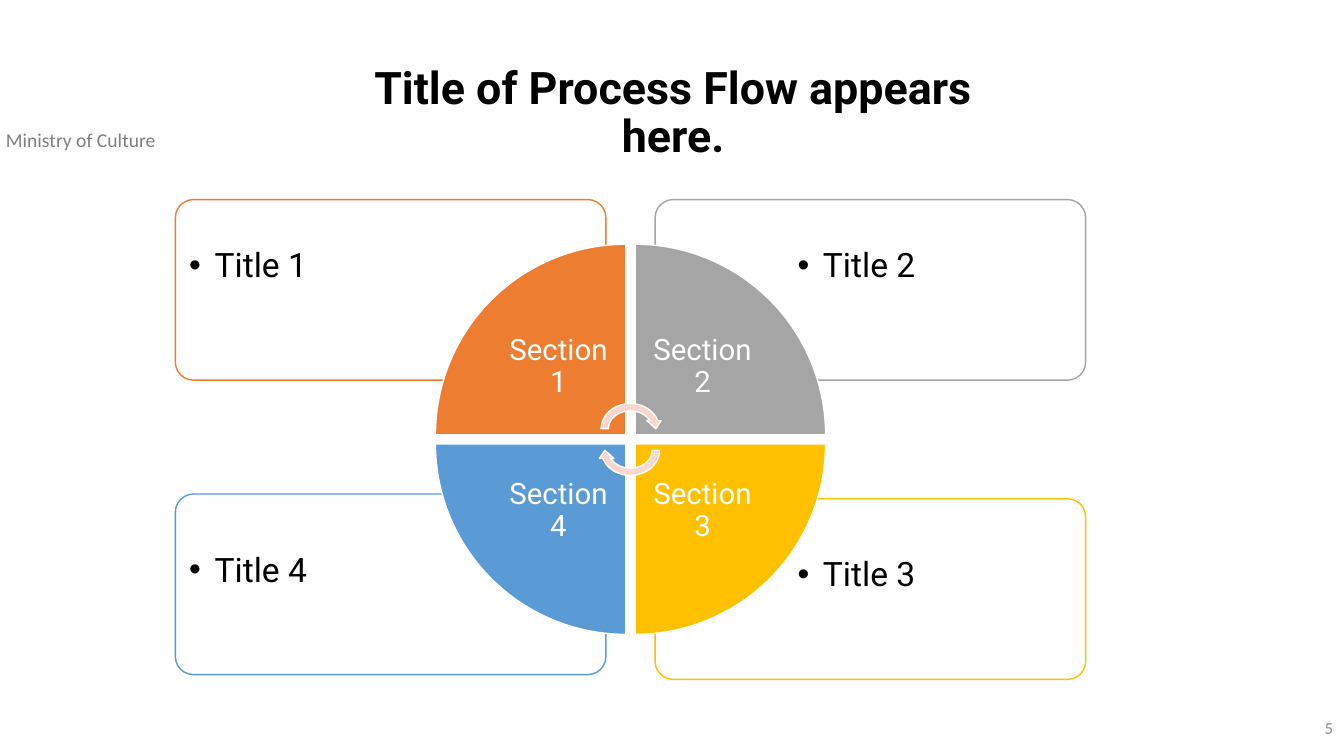
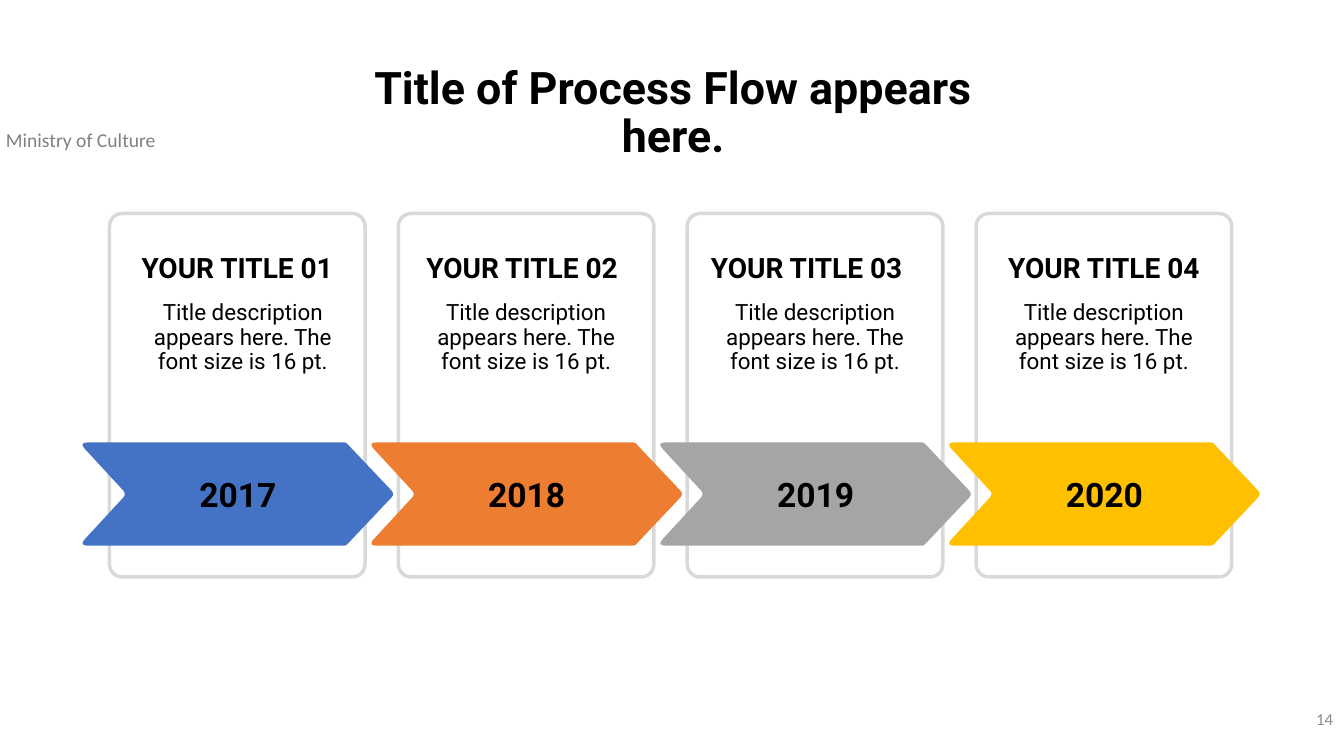
import math
from dataclasses import dataclass

from lxml import etree
from pptx import Presentation
from pptx import util as u
from pptx.dml.color import RGBColor
from pptx.enum import shapes, text
from pptx.oxml.ns import qn


@dataclass(frozen=True)
class Theme:
    heading_font: str = "Roboto"
    footer_font: str = "Calibri"
    black: str = "000000"
    white: str = "FFFFFF"
    ministry: str = "808080"
    number: str = "8C8C8C"
    frame: str = "D9D9D9"
    cycle_arrow: str = "F8D7CE"
    blue: str = "4472C4"
    orange: str = "ED7D31"
    gray: str = "A5A5A5"
    yellow: str = "FFC000"
    light_blue: str = "5B9BD5"
    title_size: int = 32
    large_size: int = 24
    section_size: int = 21
    heading_size: int = 20
    body_size: int = 16
    ministry_size: int = 14
    number_size: int = 12


THEME = Theme()
ALIGN = text.PP_ALIGN
ANCHOR = text.MSO_ANCHOR
PRESET = shapes.MSO_SHAPE

# Lengths below are in centimetres.
CYCLE_X, CYCLE_Y = 15.89, 11.07
WEDGE_SIZE, WEDGE_GAP = 4.8, 0.23
LABEL_SIZE = 3.4
BOX_WIDTH, BOX_HEIGHT, BOX_GAP = 10.85, 4.55, 1.24
BULLET_WIDTH, BULLET_HEIGHT = 7.39, 3.2
CARD_PITCH, CARD_LEFT, CARD_TOP = 7.28, 2.76, 5.38
CARD_WIDTH, CARD_HEIGHT = 6.44, 9.16
ARROW_LEFT, ARROW_TOP = 1.99, 11.15
# Corners of an arrow: x, y and the length cut off for rounding.
ARROW_CORNERS = [(0, 0, 0.23), (6.73, 0, 0.05), (7.96, 1.3, 0.13),
                 (6.73, 2.6, 0.05), (0, 2.6, 0.23), (1.2, 1.3, 0.13)]

# Label, box title, colour, horizontal and vertical side, box top, bullet offset, anchor
SECTIONS = [
    ("Section 1", "Title 1", THEME.orange, -1, -1, 5.03, 0.1, ANCHOR.MIDDLE),
    ("Section 2", "Title 2", THEME.gray, 1, -1, 5.03, 0.1, ANCHOR.MIDDLE),
    ("Section 3", "Title 3", THEME.yellow, 1, 1, 12.57, 1.24, ANCHOR.TOP),
    ("Section 4", "Title 4", THEME.light_blue, -1, 1, 12.45, 1.24, ANCHOR.TOP),
]

# Year, heading, colour, sideways shift of heading and of description
MILESTONES = [
    ("2017", "YOUR TITLE 01", THEME.blue, 0, 0.14),
    ("2018", "YOUR TITLE 02", THEME.orange, -0.1, 0),
    ("2019", "YOUR TITLE 03", THEME.gray, -0.21, 0),
    ("2020", "YOUR TITLE 04", THEME.yellow, 0, 0),
]


def lengths(*values):
    return [u.Cm(value) for value in values]


def write(shape, content, size, *, font=THEME.heading_font, color=THEME.black,
          bold=False, align=ALIGN.LEFT, anchor=ANCHOR.TOP, spacing=1.0,
          inset=(0.25, 0.13), bullet=False):
    frame = shape.text_frame
    frame.word_wrap = True
    frame.auto_size = text.MSO_AUTO_SIZE.NONE
    frame.vertical_anchor = anchor
    frame.margin_left = frame.margin_right = u.Cm(inset[0])
    frame.margin_top = frame.margin_bottom = u.Cm(inset[1])
    paragraph = frame.paragraphs[0]
    paragraph.alignment = align
    paragraph.line_spacing = spacing
    if bullet:
        add_bullet(paragraph)
    run = paragraph.add_run()
    run.text = content
    run.font.name = font
    run.font.size = u.Pt(size)
    run.font.bold = bold
    run.font.color.rgb = RGBColor.from_string(color)


def add_bullet(paragraph, indent=0.64):
    properties = paragraph._p.get_or_add_pPr()
    properties.set("marL", str(u.Cm(indent)))
    properties.set("indent", str(-u.Cm(indent)))
    etree.SubElement(properties, qn("a:buFont"), typeface="Arial")
    etree.SubElement(properties, qn("a:buChar"), char="•")


def add_text(slide, box, content, size, **formatting):
    write(slide.shapes.add_textbox(*lengths(*box)), content, size, **formatting)


def paint(shape, fill=None, line=None, width=1):
    shape.shadow.inherit = False
    if fill:
        shape.fill.solid()
        shape.fill.fore_color.rgb = RGBColor.from_string(fill)
    else:
        shape.fill.background()
    if line:
        shape.line.color.rgb = RGBColor.from_string(line)
        shape.line.width = u.Pt(width)
    else:
        shape.line.fill.background()


def add_preset(slide, preset, box, rotation=0, **colors):
    shape = slide.shapes.add_shape(preset, *lengths(*box))
    shape.rotation = rotation
    paint(shape, **colors)
    return shape


def add_rounded_box(slide, box, radius, **colors):
    shape = add_preset(slide, PRESET.ROUNDED_RECTANGLE, box, **colors)
    shape.adjustments[0] = radius


def rounded_outline(corners, steps=6):
    """Return outline points with each corner replaced by a quadratic curve."""
    points = []
    for index, (x, y, cut) in enumerate(corners):
        ends = []
        for near in (corners[index - 1], corners[(index + 1) % len(corners)]):
            ratio = cut / math.dist((x, y), near[:2])
            ends.append((x + (near[0] - x) * ratio, y + (near[1] - y) * ratio))
        (x0, y0), (x1, y1) = ends
        for step in range(steps + 1):
            t = step / steps
            a, b, c = (1 - t) ** 2, 2 * t * (1 - t), t ** 2
            points.append((a * x0 + b * x + c * x1, a * y0 + b * y + c * y1))
    return points


def add_year_arrow(slide, left, year, color):
    points = [lengths(left + x, ARROW_TOP + y)
              for x, y in rounded_outline(ARROW_CORNERS)]
    builder = slide.shapes.build_freeform(*points[0])
    builder.add_line_segments(points[1:], close=True)
    arrow = builder.convert_to_shape()
    paint(arrow, fill=color)
    write(arrow, year, THEME.large_size, bold=True, align=ALIGN.CENTER,
          anchor=ANCHOR.MIDDLE)


def add_base_slide(presentation, number, number_top):
    """Add a slide with the shared title, ministry name and page number."""
    slide = presentation.slides.add_slide(presentation.slide_layouts[5])
    title = slide.shapes.title
    title.left, title.top, title.width, title.height = lengths(8.33, 1.52, 17.27, 2.72)
    write(title, "Title of Process Flow appears here.", THEME.title_size,
          bold=True, align=ALIGN.CENTER, spacing=0.9)
    add_text(slide, (-0.1, 3.1, 7.37, 0.86), "Ministry of Culture",
             THEME.ministry_size, font=THEME.footer_font, color=THEME.ministry)
    add_text(slide, (26.23, number_top, 7.62, 1.02), number, THEME.number_size,
             font=THEME.footer_font, color=THEME.number, align=ALIGN.RIGHT,
             anchor=ANCHOR.MIDDLE)
    return slide


def beside(center, side, gap, size):
    """Return the start of a span that lies half a gap before or after center."""
    return center + gap / 2 if side > 0 else center - gap / 2 - size


def add_section_box(slide, title, color, side, top, offset, anchor):
    left = beside(CYCLE_X, side, BOX_GAP, BOX_WIDTH)
    add_rounded_box(slide, (left, top, BOX_WIDTH, BOX_HEIGHT), 0.1,
                    fill=THEME.white, line=color)
    margin = BOX_WIDTH - BULLET_WIDTH - 0.12 if side > 0 else 0.1
    add_text(slide, (left + margin, top + offset, BULLET_WIDTH, BULLET_HEIGHT),
             title, THEME.large_size, anchor=anchor, spacing=0.9,
             inset=(0.25, 0.25), bullet=True)


def add_section_wedge(slide, label, color, across, down, rotation):
    def square(size):
        return (beside(CYCLE_X, across, WEDGE_GAP, size),
                beside(CYCLE_Y, down, WEDGE_GAP, size), size, size)

    add_preset(slide, PRESET.PIE_WEDGE, square(WEDGE_SIZE), rotation,
               fill=color, line=THEME.white)
    add_text(slide, square(LABEL_SIZE), label, THEME.section_size,
             color=THEME.white, align=ALIGN.CENTER, anchor=ANCHOR.MIDDLE,
             spacing=0.9, inset=(0.41, 0.41))


def add_cycle_slide(presentation):
    slide = add_base_slide(presentation, "5", 17.83)
    for _, title, color, across, _, top, offset, anchor in SECTIONS:
        add_section_box(slide, title, color, across, top, offset, anchor)
    for index, (label, _, color, across, down, *_) in enumerate(SECTIONS):
        add_section_wedge(slide, label, color, across, down, 90 * index)
    for top, rotation in ((10.08, 0), (10.62, 180)):
        add_preset(slide, PRESET.CIRCULAR_ARROW, (15.06, top, 1.65, 1.45),
                   rotation, fill=THEME.cycle_arrow, line=THEME.white)


def add_milestone(slide, shift, year, heading, color, heading_shift, body_shift):
    left = CARD_LEFT + shift
    add_rounded_box(slide, (left, CARD_TOP, CARD_WIDTH, CARD_HEIGHT), 0.05,
                    line=THEME.frame, width=2.5)
    add_year_arrow(slide, ARROW_LEFT + shift, year, color)
    add_text(slide, (left + heading_shift, 6.17, CARD_WIDTH, 1.12), heading,
             THEME.heading_size, bold=True, align=ALIGN.CENTER,
             anchor=ANCHOR.BOTTOM)
    body_width = 5.54
    add_text(slide, (left + (CARD_WIDTH - body_width) / 2 + body_shift, 7.52,
                     body_width, 1.98),
             "Title description appears here. The font size is 16 pt.",
             THEME.body_size, align=ALIGN.CENTER, spacing=0.9,
             inset=(0.13, 0.08))


def add_timeline_slide(presentation):
    slide = add_base_slide(presentation, "14", 17.6)
    for index, milestone in enumerate(MILESTONES):
        add_milestone(slide, index * CARD_PITCH, *milestone)


def main():
    presentation = Presentation()
    presentation.slide_width, presentation.slide_height = lengths(33.87, 19.05)
    add_cycle_slide(presentation)
    add_timeline_slide(presentation)
    presentation.save("out.pptx")


if __name__ == "__main__":
    main()
